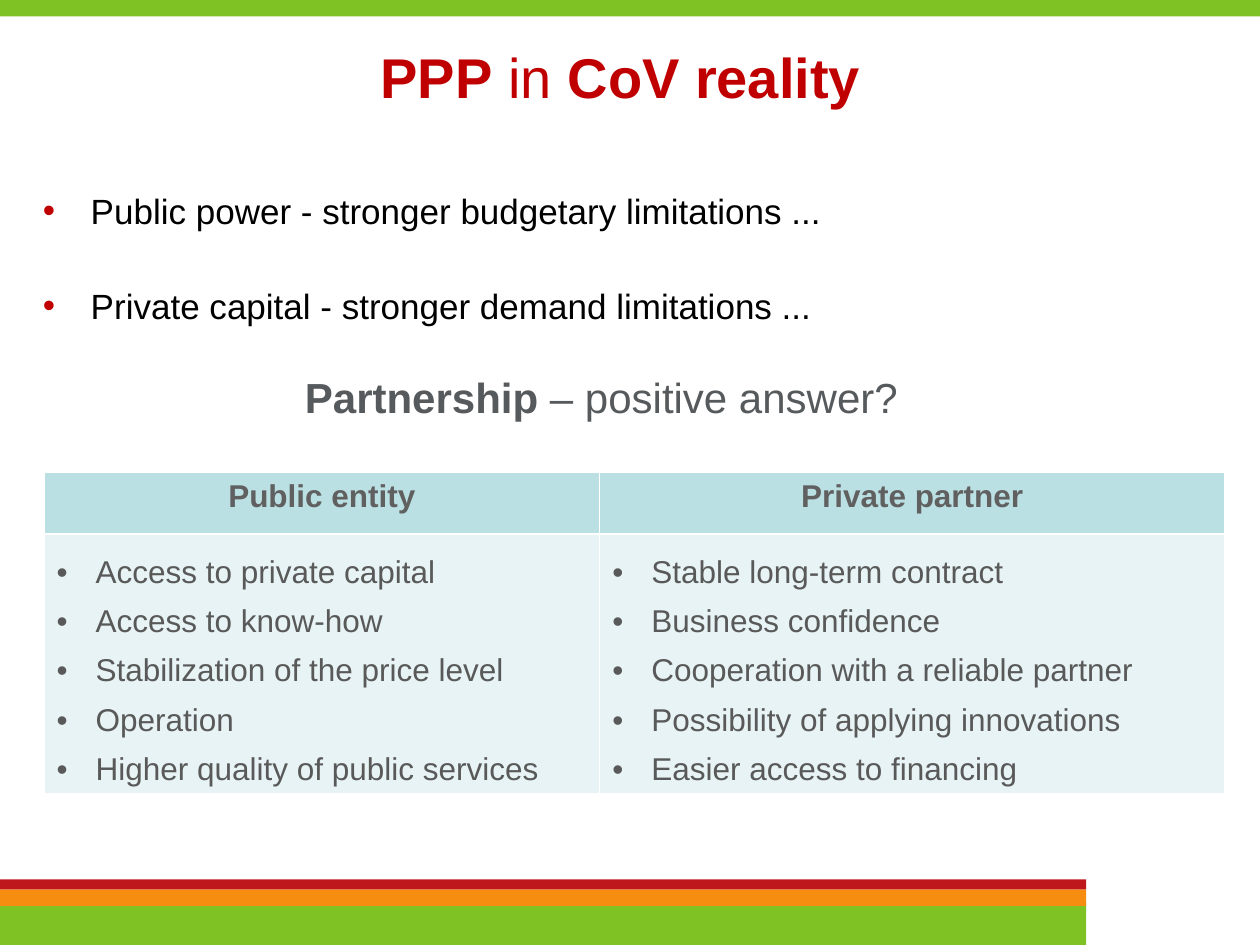
from lxml.etree import SubElement
from pptx import Presentation
from pptx.dml.color import RGBColor
from pptx.enum.shapes import MSO_SHAPE
from pptx.enum.text import MSO_ANCHOR, MSO_AUTO_SIZE, PP_ALIGN
from pptx.oxml.ns import qn
from pptx.util import Inches, Pt

WIDTH, HEIGHT = 10, 7.5
GREEN, ORANGE, RED = "7FC223", "F78D10", "BE171C"
TITLE_RED, GREY = "C00000", "565A5C"

# left, top, width, height, colour
BANDS = [
    (0, 0, WIDTH, 0.13, GREEN),
    (0, 7.16, 8.62, HEIGHT - 7.16, GREEN),
    (0, 7.06, 8.62, 0.13, ORANGE),
    (0, 6.98, 8.62, 0.08, RED),
]
LIMITATIONS = [
    "Public power - stronger budgetary limitations ...",
    "Private capital - stronger demand limitations ...",
]
BENEFITS = {
    "Public entity": [
        "Access to private capital",
        "Access to know-how",
        "Stabilization of the price level",
        "Operation",
        "Higher quality of public services",
    ],
    "Private partner": [
        "Stable long-term contract",
        "Business confidence",
        "Cooperation with a reliable partner",
        "Possibility of applying innovations",
        "Easier access to financing",
    ],
}


def colour(hex_value):
    return RGBColor.from_string(hex_value)


def set_indent(paragraph, left, first=0):
    properties = paragraph._p.get_or_add_pPr()
    properties.set("marL", str(Inches(left)))
    properties.set("indent", str(Inches(first)))
    return properties


def set_bullet(paragraph, indent, bullet_colour):
    properties = set_indent(paragraph, indent, -indent)
    tint = SubElement(properties, qn("a:buClr"))
    SubElement(tint, qn("a:srgbClr"), val=bullet_colour)
    SubElement(properties, qn("a:buFont"), typeface="Arial")
    SubElement(properties, qn("a:buChar"), char="•")


def add_run(paragraph, text, size, text_colour, bold=False):
    run = paragraph.add_run()
    run.text = text
    font_format = {"name": "Arial", "size": Pt(size), "bold": bold}
    for attribute, value in font_format.items():
        setattr(run.font, attribute, value)
    run.font.color.rgb = colour(text_colour)


def next_paragraph(frame, index, **paragraph_format):
    paragraph = frame.add_paragraph() if index else frame.paragraphs[0]
    for attribute, value in paragraph_format.items():
        setattr(paragraph, attribute, value)
    return paragraph


def place_placeholder(placeholder, left, top, width, height):
    box = {"left": left, "top": top, "width": width, "height": height}
    for attribute, value in box.items():
        setattr(placeholder, attribute, Inches(value))
    frame = placeholder.text_frame
    frame_format = {
        "auto_size": MSO_AUTO_SIZE.NONE,
        "vertical_anchor": MSO_ANCHOR.TOP,
        "margin_top": Inches(0.1),
        "word_wrap": True,
    }
    for attribute, value in frame_format.items():
        setattr(frame, attribute, value)
    return frame


def add_band(slide, left, top, width, height, fill):
    band = slide.shapes.add_shape(
        MSO_SHAPE.RECTANGLE, *map(Inches, (left, top, width, height)))
    band.shadow.inherit = False
    band.fill.solid()
    band.fill.fore_color.rgb = colour(fill)
    band.line.fill.background()


def fill_title(title):
    frame = place_placeholder(title, 0.12, 0.24, 9.61, 0.43)
    heading = next_paragraph(frame, 0, alignment=PP_ALIGN.CENTER)
    for text, bold in [("PPP", True), (" in ", False), ("CoV reality", True)]:
        add_run(heading, text, 32, TITLE_RED, bold)


def fill_body(body):
    frame = place_placeholder(body, 0.24, 1.07, 9.61, 2.6)
    for index, text in enumerate(LIMITATIONS):
        limitation = next_paragraph(
            frame, index, line_spacing=2.0, space_before=Pt(6 * index))
        set_bullet(limitation, 0.38, TITLE_RED)
        add_run(limitation, text, 20, "000000")

    # Closing question, set in from the list
    question = next_paragraph(
        frame, len(LIMITATIONS), line_spacing=1.1, space_before=Pt(23))
    SubElement(set_indent(question, 2.08), qn("a:buNone"))
    add_run(question, "Partnership", 24, GREY, True)
    add_run(question, " – positive answer?", 24, GREY)


def fill_cell(cell, fill):
    cell.fill.solid()
    cell.fill.fore_color.rgb = colour(fill)
    return cell.text_frame


def add_benefits_table(slide):
    table = slide.shapes.add_table(
        2, len(BENEFITS), *map(Inches, (0.35, 3.75, 9.37, 2.44))).table
    for column, width in zip(table.columns, (4.41, 4.96)):
        column.width = Inches(width)
    for row, height in zip(table.rows, (0.49, 1.95)):
        row.height = Inches(height)

    for column, (partner, benefits) in enumerate(BENEFITS.items()):
        header = fill_cell(table.cell(0, column), "BBE0E3")
        heading = next_paragraph(header, 0, alignment=PP_ALIGN.CENTER)
        add_run(heading, partner, 18, "606060", True)

        content = fill_cell(table.cell(1, column), "E7F3F4")
        for index, text in enumerate(benefits):
            benefit = next_paragraph(content, index, line_spacing=1.4)
            set_bullet(benefit, 0.31, "595959")
            add_run(benefit, text, 18, "595959")


def main():
    presentation = Presentation()
    presentation.slide_width = Inches(WIDTH)
    presentation.slide_height = Inches(HEIGHT)
    slide = presentation.slides.add_slide(presentation.slide_layouts[1])

    for band in BANDS:
        add_band(slide, *band)
    fill_title(slide.shapes.title)
    fill_body(slide.placeholders[1])
    add_benefits_table(slide)
    presentation.save("out.pptx")


if __name__ == "__main__":
    main()
